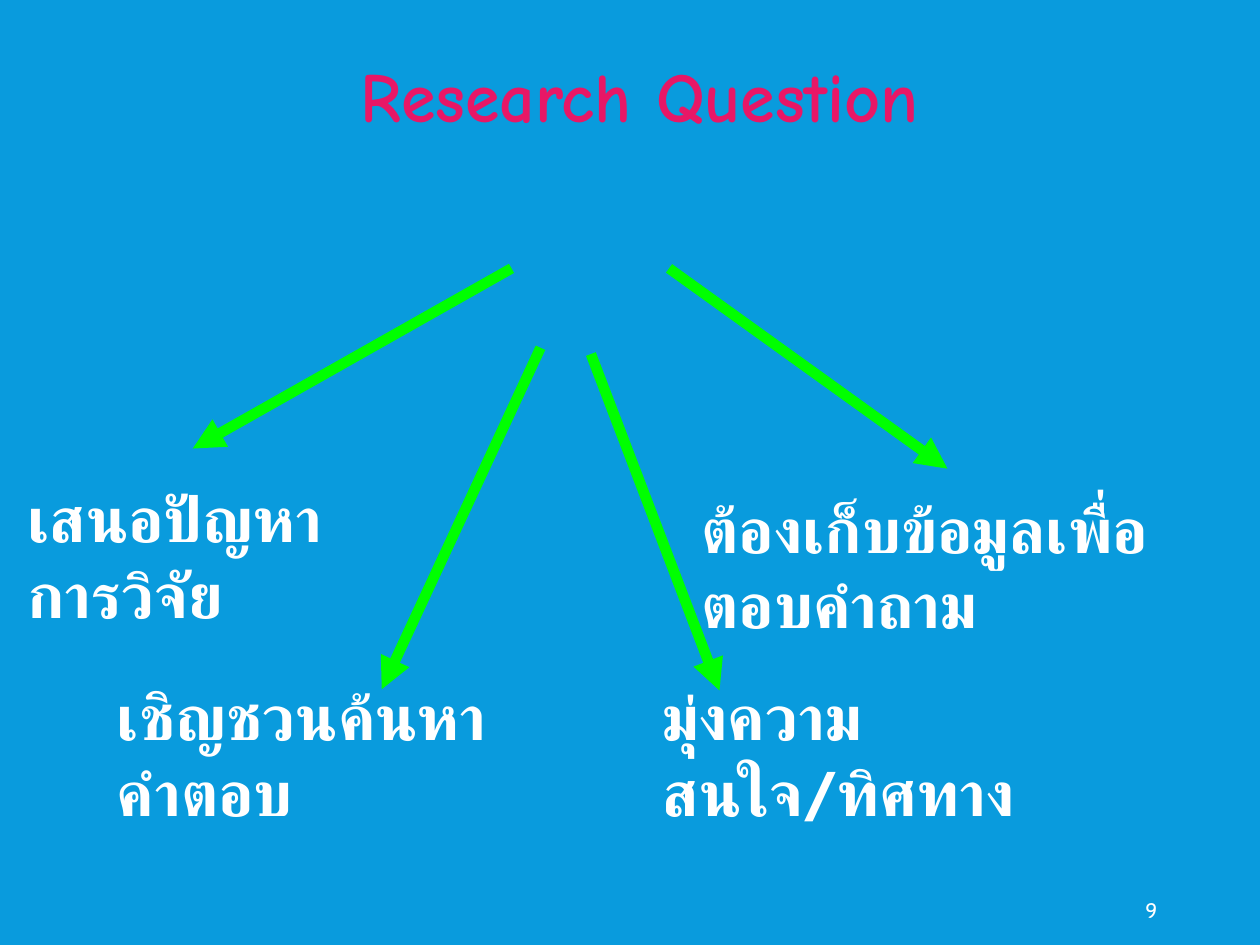
from pptx import Presentation
from pptx import util as u
from pptx.dml.color import RGBColor
from pptx.enum import shapes, text
from pptx.oxml.ns import qn
from lxml import etree

BACKGROUND = "099BDD"
WHITE = "FFFFFF"
PINK = "E81766"
GREEN = "00FF00"

# label, label box (left, top, width, height), arrow start, arrow end
CALLOUTS = [
    ("เสนอปัญหาการวิจัย", (0.12, 3.76, 3, 0.7), (4.06, 2.13), (1.53, 3.56)),
    ("เชิญชวนค้นหาคำตอบ", (0.83, 5.33, 3.32, 0.7), (4.29, 2.76), (3.03, 5.47)),
    ("มุ่งความสนใจ/ทิศทาง", (5.16, 5.33, 3.39, 0.7), (4.69, 2.81), (5.71, 5.48)),
    ("ต้องเก็บข้อมูลเพื่อตอบคำถาม", (5.47, 3.84, 4.45, 0.7), (5.31, 2.13), (7.52, 3.72)),
]


def color(hex_string):
    return RGBColor.from_string(hex_string)


def add_text(parent, content, box, size, font="Cabin", fill=WHITE, bold=False,
             align=text.PP_ALIGN.LEFT, anchor=text.MSO_ANCHOR.TOP, left_inset=0.1):
    shape = parent.add_textbox(*map(u.Inches, box))
    frame = shape.text_frame
    frame.word_wrap = True
    frame.vertical_anchor = anchor
    frame.margin_left = u.Inches(left_inset)
    paragraph = frame.paragraphs[0]
    paragraph.alignment = align
    run = paragraph.add_run()
    run.text = content
    run.font.name = font
    run.font.size = u.Pt(size)
    run.font.bold = bold
    run.font.color.rgb = color(fill)


def add_arrow(parent, start, end):
    arrow = parent.add_connector(shapes.MSO_CONNECTOR.STRAIGHT,
                                 *map(u.Inches, start + end))
    arrow.line.color.rgb = color(GREEN)
    arrow.line.width = u.Pt(6)
    etree.SubElement(arrow.line._get_or_add_ln(), qn("a:tailEnd"), type="triangle")
    etree.SubElement(arrow._element.spPr, qn("a:effectLst"))


def add_callout(slide, label, box, start, end):
    """Group a label with the arrow that leads to it."""
    group = slide.shapes.add_group_shape()
    add_text(group.shapes, label, box, 36, bold=True)
    add_arrow(group.shapes, start, end)


def main():
    presentation = Presentation()
    presentation.slide_width = u.Inches(10)
    presentation.slide_height = u.Inches(7.5)
    slide = presentation.slides.add_slide(presentation.slide_layouts[6])
    slide.background.fill.solid()
    slide.background.fill.fore_color.rgb = color(BACKGROUND)

    add_text(slide.shapes, "9", (9.04, 7.02, 0.78, 0.4), 12,
             anchor=text.MSO_ANCHOR.MIDDLE, left_inset=0.05)
    add_text(slide.shapes, "Research Question", (2.48, 0.37, 5.2, 1.76), 40,
             font="Comic Neue", fill=PINK, bold=True, align=text.PP_ALIGN.CENTER)
    for callout in CALLOUTS:
        add_callout(slide, *callout)

    presentation.save("out.pptx")


if __name__ == "__main__":
    main()
